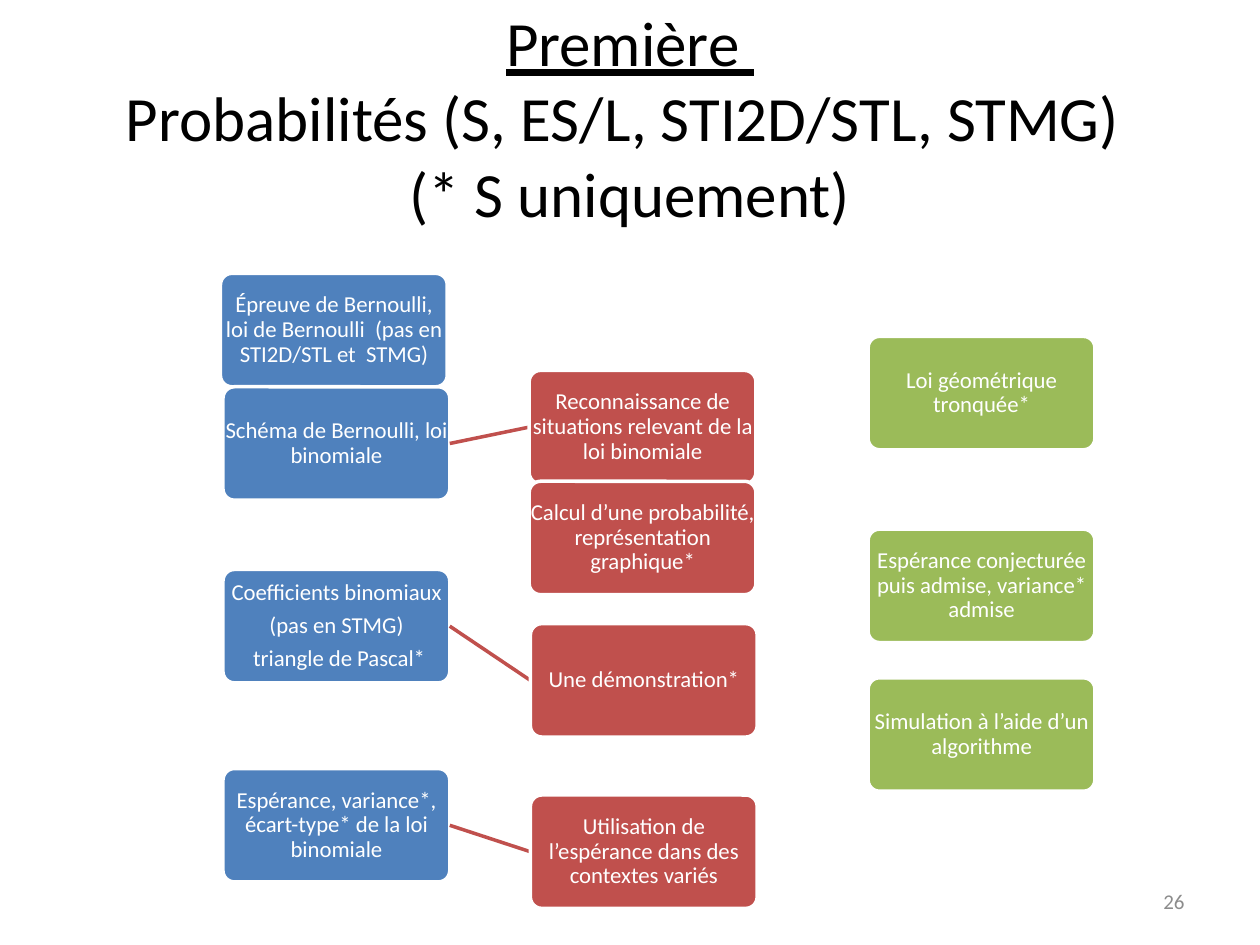
from dataclasses import dataclass
from typing import Optional

from lxml import etree
from pptx import Presentation
from pptx.dml.color import RGBColor
from pptx.enum.shapes import MSO_CONNECTOR, MSO_SHAPE
from pptx.enum.text import MSO_ANCHOR, PP_ALIGN
from pptx.oxml.ns import qn
from pptx.util import Inches, Pt

STRAIGHT = MSO_CONNECTOR.STRAIGHT
ROUNDED = MSO_SHAPE.ROUNDED_RECTANGLE
MIDDLE = MSO_ANCHOR.MIDDLE
CENTER, RIGHT = PP_ALIGN.CENTER, PP_ALIGN.RIGHT

COLORS = {
    "notion": "4F81BD",
    "skill": "C0504D",
    "extension": "9BBB59",
    "light": "FFFFFF",
    "title": "000000",
    "number": "8C8C8C",
}
FONT = "Calibri"

# Grid of 100 columns by 75 rows; all positions below are in its cells.
SLIDE_WIDTH, SLIDE_HEIGHT = Inches(10), Inches(7.5)
CELL = SLIDE_WIDTH / 100
BOX_WIDTH, BOX_HEIGHT = 18, 9
COLUMNS = {"notion": 17.7, "skill": 42, "extension": 68.9}
BOX_MARGIN = Inches(0.01)
BOX_PARAGRAPH = {"alignment": CENTER, "line_spacing": 0.9, "space_after": Pt(4.55)}


@dataclass(frozen=True)
class Topic:
    kind: str
    top: float
    text: str
    shift: float = 0
    source: Optional["Topic"] = None

    @property
    def left(self) -> float:
        return COLUMNS[self.kind] + self.shift

    @property
    def middle(self) -> float:
        return self.top + BOX_HEIGHT / 2


TRIAL = Topic("notion", 21.7, "Épreuve de Bernoulli, loi de Bernoulli  (pas en STI2D/STL et  STMG)", -0.2)
SCHEME = Topic("notion", 30.7, "Schéma de Bernoulli, loi binomiale")
COEFFICIENTS = Topic("notion", 45.2, "Coefficients binomiaux\n(pas en STMG)\n triangle de Pascal*")
MOMENTS = Topic("notion", 61, "Espérance, variance*, écart-type* de la loi binomiale")

TOPICS = [
    TRIAL,
    SCHEME,
    Topic("skill", 29.4, "Reconnaissance de situations relevant de la loi binomiale", source=SCHEME),
    Topic("extension", 26.7, "Loi géométrique tronquée*"),
    COEFFICIENTS,
    Topic("skill", 38.2, "Calcul d’une probabilité, représentation graphique*"),
    Topic("skill", 49.5, "Une démonstration*", 0.1, COEFFICIENTS),
    Topic("extension", 42, "Espérance conjecturée puis admise, variance* admise"),
    Topic("extension", 53.8, "Simulation à l’aide d’un algorithme"),
    MOMENTS,
    Topic("skill", 63.1, "Utilisation de l’espérance dans des contextes variés", 0.1, MOMENTS),
]


def cells(*lengths: float) -> list[int]:
    """Turn grid cells into slide lengths."""
    return [round(length * CELL) for length in lengths]


def color(name: str) -> RGBColor:
    return RGBColor.from_string(COLORS[name])


def apply_format(target, values: dict) -> None:
    for attribute, value in values.items():
        setattr(target, attribute, value)


def style_font(font, size: float, color_name: str) -> None:
    apply_format(font, {"name": FONT, "size": Pt(size)})
    font.color.rgb = color(color_name)


def add_text_frame(shapes, bounds: list[int]):
    frame = shapes.add_textbox(*bounds).text_frame
    apply_format(frame, {"word_wrap": True, "vertical_anchor": MIDDLE})
    return frame


def draw_title(shapes) -> None:
    frame = add_text_frame(shapes, cells(5, 3, 90, 12.5))
    paragraph = frame.paragraphs[0]
    paragraph.alignment = CENTER
    lines = ["Première ", "Probabilités (S, ES/L, STI2D/STL, STMG) ", "(* S uniquement)"]
    for index, line in enumerate(lines):
        if index:
            paragraph.add_line_break()
        run = paragraph.add_run()
        run.text = line
        style_font(run.font, 36, "title")
        run.font.underline = index == 0


def draw_link(shapes, source: Topic, target: Topic) -> None:
    ends = cells(source.left + BOX_WIDTH, source.middle, target.left, target.middle)
    link = shapes.add_connector(STRAIGHT, *ends)
    link.line.color.rgb = color(target.kind)
    link.line.width = Pt(2)
    etree.SubElement(link._element.spPr, qn("a:effectLst"))


def draw_topic(shapes, topic: Topic) -> None:
    """Group a rounded box with a text box that uses its full width."""
    group = shapes.add_group_shape()
    bounds = cells(topic.left, topic.top, BOX_WIDTH, BOX_HEIGHT)
    box = group.shapes.add_shape(ROUNDED, *bounds)
    box.adjustments[0] = 0.1
    box.shadow.inherit = False
    box.fill.solid()
    box.fill.fore_color.rgb = color(topic.kind)
    box.line.color.rgb = color("light")
    box.line.width = Pt(2)

    frame = add_text_frame(group.shapes, bounds)
    for side in ("left", "top", "right", "bottom"):
        setattr(frame, f"margin_{side}", BOX_MARGIN)
    frame.text = topic.text
    for paragraph in frame.paragraphs:
        apply_format(paragraph, BOX_PARAGRAPH)
        style_font(paragraph.runs[0].font, 13, "light")


def draw_slide_number(shapes, number: int) -> None:
    frame = add_text_frame(shapes, cells(71.7, 69.5, 23.3, 4))
    frame.text = str(number)
    paragraph = frame.paragraphs[0]
    paragraph.alignment = RIGHT
    style_font(paragraph.runs[0].font, 12, "number")


def main() -> None:
    presentation = Presentation()
    apply_format(presentation, {"slide_width": SLIDE_WIDTH, "slide_height": SLIDE_HEIGHT})
    shapes = presentation.slides.add_slide(presentation.slide_layouts[6]).shapes
    draw_title(shapes)
    for topic in TOPICS:
        if topic.source:
            draw_link(shapes, topic.source, topic)
        draw_topic(shapes, topic)
    draw_slide_number(shapes, 26)
    presentation.save("out.pptx")


if __name__ == "__main__":
    main()
